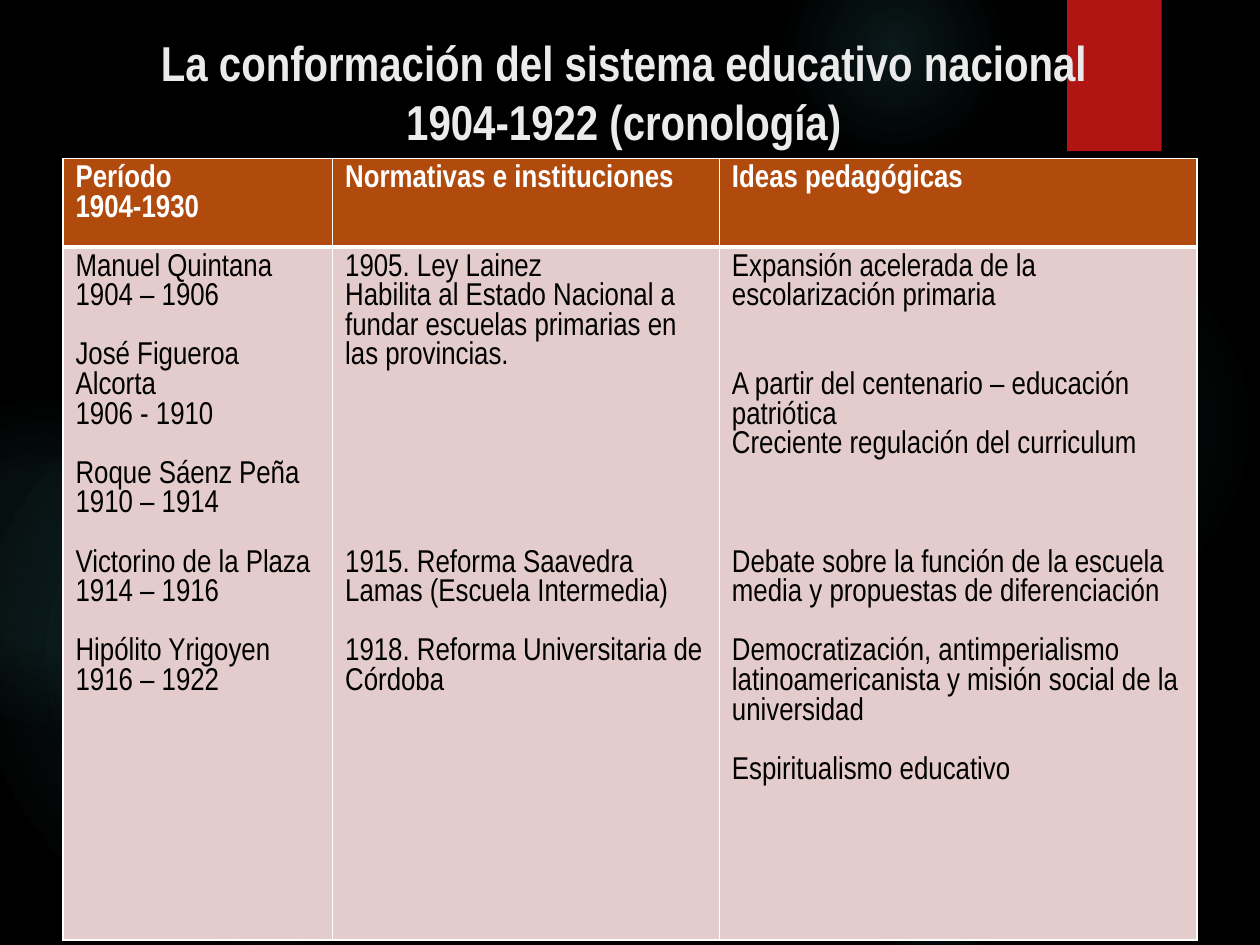
from lxml import etree
from pptx import Presentation
from pptx.dml.color import RGBColor
from pptx.enum.shapes import MSO_SHAPE
from pptx.enum.text import MSO_ANCHOR, PP_ALIGN
from pptx.oxml import parse_xml
from pptx.oxml.ns import nsdecls, qn
from pptx.util import Inches, Pt

FONT = "Arial Narrow"
LINE_HEIGHT = 16.9
GLOW = "50B9C1"
WHITE = "FFFFFF"

GLOWS = [
    ((6.89, 1.83, 3.08), ((0, 7), (36, 6), (69, 0))),
    ((6.22, -0.5, 1.75), ((0, 14), (36, 7), (73, 0))),
    ((6.89, 6.67, 1.08), ((0, 9), (36, 5), (66, 0))),
    ((-0.17, 2.92, 4.58), ((0, 11), (36, 10), (75, 0))),
    ((-0.92, 3.17, 2.58), ((0, 8), (36, 8), (72, 0))),
]

HEADERS = [
    [(0, "Período"), (0, "1904-1930")],
    [(0, "Normativas e instituciones")],
    [(0, "Ideas pedagógicas")],
]

CONTENTS = [
    [
        (0, "Manuel Quintana 1904 – 1906"),
        (1, "José Figueroa Alcorta"),
        (0, "1906 - 1910"),
        (1, "Roque Sáenz Peña"),
        (0, "1910 – 1914"),
        (1, "Victorino de la Plaza"),
        (0, "1914 – 1916"),
        (1, "Hipólito Yrigoyen"),
        (0, "1916 – 1922"),
    ],
    [
        (0, "1905. Ley Lainez"),
        (0, "Habilita al Estado Nacional a fundar escuelas primarias en las provincias."),
        (6, "1915. Reforma Saavedra Lamas (Escuela Intermedia)"),
        (1, "1918. Reforma Universitaria de Córdoba"),
    ],
    [
        (0, "Expansión acelerada de la escolarización primaria"),
        (2, "A partir del centenario – educación patriótica"),
        (0, "Creciente regulación del curriculum"),
        (3, "Debate sobre la función de la escuela media y propuestas de diferenciación"),
        (1, "Democratización, antimperialismo latinoamericanista y misión social de la universidad"),
        (1, "Espiritualismo educativo"),
    ],
]


def color(value):
    return RGBColor.from_string(value)


def style_font(font, size, value, bold):
    font.name = FONT
    font.size = Pt(size)
    font.color.rgb = color(value)
    font.bold = bold


def add_glow(slide, left, top, size, stops):
    shape = slide.shapes.add_shape(
        MSO_SHAPE.OVAL, Inches(left), Inches(top), Inches(size), Inches(size))
    shape.shadow.inherit = False
    shape.line.fill.background()
    stop_xml = "".join(
        f'<a:gs pos="{position * 1000}"><a:srgbClr val="{GLOW}">'
        f'<a:alpha val="{alpha * 1000}"/></a:srgbClr></a:gs>'
        for position, alpha in stops)
    gradient = parse_xml(
        f'<a:gradFill {nsdecls("a")}><a:gsLst>{stop_xml}</a:gsLst><a:path path="circle">'
        '<a:fillToRect l="50000" t="50000" r="50000" b="50000"/></a:path></a:gradFill>')
    shape._element.spPr.find(qn("a:prstGeom")).addnext(gradient)


def add_ribbon(slide, left, top, width, height):
    shape = slide.shapes.add_shape(
        MSO_SHAPE.RECTANGLE, Inches(left), Inches(top), Inches(width), Inches(height))
    shape.shadow.inherit = False
    shape.fill.solid()
    shape.fill.fore_color.rgb = color("B01513")
    shape.line.fill.background()
    effects = shape._element.spPr.find(qn("a:effectLst"))
    effects.append(parse_xml(
        f'<a:outerShdw {nsdecls("a")} blurRad="{Pt(3)}" dist="{Pt(2)}" dir="5400000">'
        '<a:srgbClr val="000000"><a:alpha val="45000"/></a:srgbClr></a:outerShdw>'))


def add_title(slide, left, top, width, height):
    box = slide.shapes.add_textbox(Inches(left), Inches(top), Inches(width), Inches(height))
    frame = box.text_frame
    frame.word_wrap = True
    frame.vertical_anchor = MSO_ANCHOR.TOP
    frame.text = "La conformación del sistema educativo nacional\v1904-1922 (cronología)"
    paragraph = frame.paragraphs[0]
    paragraph.alignment = PP_ALIGN.CENTER
    paragraph.line_spacing = Pt(33.7)
    for run in paragraph.runs:
        style_font(run.font, 28, "EBEBEB", True)


def set_borders(cell, widths):
    properties = cell._tc.get_or_add_tcPr()
    for index, (side, width) in enumerate(zip("LRTB", widths)):
        line = etree.Element(qn(f"a:ln{side}"), w=str(Pt(width)))
        fill = etree.SubElement(line, qn("a:solidFill"))
        etree.SubElement(fill, qn("a:srgbClr"), val=WHITE)
        properties.insert(index, line)


def fill_cell(cell, entries, background, text_color, bold, borders):
    cell.fill.solid()
    cell.fill.fore_color.rgb = color(background)
    set_borders(cell, borders)
    frame = cell.text_frame
    frame.text = "\n".join(text for _, text in entries)
    for paragraph, (gap, _) in zip(frame.paragraphs, entries):
        if gap:
            paragraph.space_before = Pt(gap * LINE_HEIGHT)
        for run in paragraph.runs:
            style_font(run.font, 18, text_color, bold)


def add_chronology(slide, left, top, width, height):
    table = slide.shapes.add_table(
        2, 3, Inches(left), Inches(top), Inches(width), Inches(height)).table
    for column, share in zip(table.columns, (2.14, 3.07, 3.79)):
        column.width = Inches(width * share / 9)
    table.rows[0].height = Inches(0.7)
    table.rows[1].height = Inches(height - 0.7)
    for index, (header, content) in enumerate(zip(HEADERS, CONTENTS)):
        fill_cell(table.cell(0, index), header, "B04A0D", WHITE, True, (1, 1, 1, 3))
        fill_cell(table.cell(1, index), content, "E4CCCC", "000000", False, (1, 1, 3, 1))


def main():
    presentation = Presentation()
    presentation.slide_width = Inches(10)
    presentation.slide_height = Inches(7.5)
    slide = presentation.slides.add_slide(presentation.slide_layouts[6])
    slide.background.fill.solid()
    slide.background.fill.fore_color.rgb = color("000000")
    for box, stops in GLOWS:
        add_glow(slide, *box, stops)
    add_ribbon(slide, 8.47, 0, 0.75, 1.2)
    add_chronology(slide, 0.5, 1.26, 9, 6.2)
    add_title(slide, 0.45, 0.21, 9, 0.94)
    presentation.save("out.pptx")


if __name__ == "__main__":
    main()
